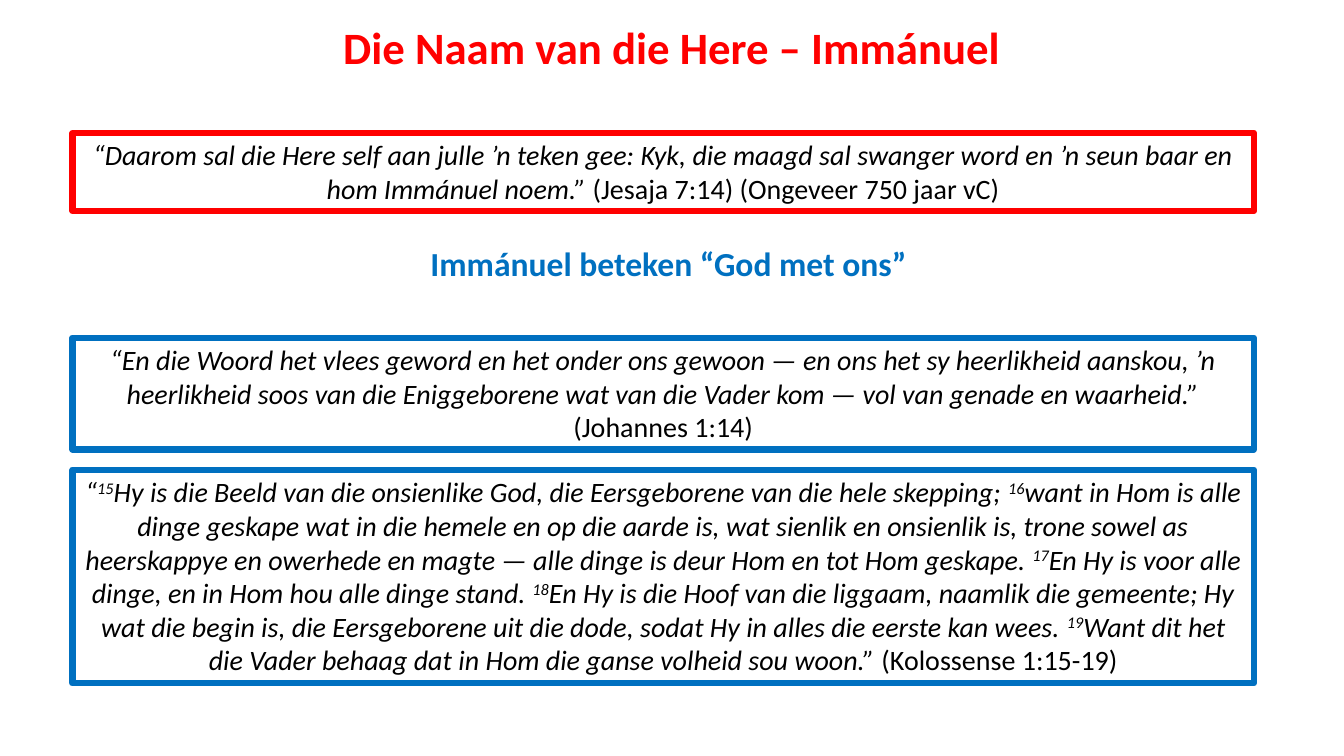
import pptx
import pptx.dml.color
import pptx.enum.shapes
import pptx.enum.text
import pptx.util

Cm = pptx.util.Cm
RED, BLUE, BLACK = "FF0000", "0070C0", "000000"
BOX_LEFT, BOX_WIDTH = 1.83, 29.77
SLIDE_WIDTH, SLIDE_HEIGHT = 33.87, 19.05

ISAIAH = [
    ("“Daarom sal die Here self aan julle ’n teken gee: Kyk, die maagd sal swanger word "
     "en ’n seun baar en hom Immánuel noem.” ", "quote"),
    ("(Jesaja 7:14) (Ongeveer 750 jaar vC)", "reference"),
]
JOHN = [
    ("“En die Woord het vlees geword en het onder ons gewoon — en ons het sy heerlikheid "
     "aanskou, ’n heerlikheid soos van die Eniggeborene wat van die Vader kom — vol van "
     "genade en waarheid.” ", "quote"),
    ("(Johannes 1:14)", "reference"),
]
COLOSSIANS = [
    ("“", "quote"),
    ("15", "verse"),
    ("Hy is die Beeld van die onsienlike God, die Eersgeborene van die hele skepping; ", "quote"),
    ("16", "verse"),
    ("want in Hom is alle dinge geskape wat in die hemele en op die aarde is, wat sienlik en "
     "onsienlik is, trone sowel as heerskappye en owerhede en magte — alle dinge is deur Hom "
     "en tot Hom geskape. ", "quote"),
    ("17", "verse"),
    ("En Hy is voor alle dinge, en in Hom hou alle dinge stand. ", "quote"),
    ("18", "verse"),
    ("En Hy is die Hoof van die liggaam, naamlik die gemeente; Hy wat die begin is, die "
     "Eersgeborene uit die dode, sodat Hy in alles die eerste kan wees. ", "quote"),
    ("19", "verse"),
    ("Want dit het die Vader behaag dat in Hom die ganse volheid sou woon.”", "quote"),
    (" (Kolossense 1:15-19)", "reference"),
]


def color(value):
    """Turn a hex string into a colour."""
    return pptx.dml.color.RGBColor.from_string(value)


def apply(target, values):
    """Set each named value on the target."""
    for name, value in values.items():
        setattr(target, name, value)


class ScriptureSlide:
    """Hold the style and the current slide."""

    font = "Calibri"
    formats = {
        "title": {"size": pptx.util.Pt(32), "bold": True},
        "meaning": {"size": pptx.util.Pt(24), "bold": True},
        "quote": {"size": pptx.util.Pt(20), "italic": True},
        "verse": {"size": pptx.util.Pt(20), "italic": True},
        "reference": {"size": pptx.util.Pt(20), "italic": False},
    }

    def __init__(self, presentation):
        """Add a title-only slide."""
        self.slide = presentation.slides.add_slide(presentation.slide_layouts[5])

    def fill_text(self, shape, runs, text_color, anchor=pptx.enum.text.MSO_ANCHOR.TOP):
        """Put formatted runs into one centred paragraph."""
        apply(shape.text_frame, {"word_wrap": True, "vertical_anchor": anchor})
        paragraph = shape.text_frame.paragraphs[0]
        paragraph.alignment = pptx.enum.text.PP_ALIGN.CENTER
        for text, style in runs:
            run = paragraph.add_run()
            run.text = text
            apply(run.font, {"name": self.font, **self.formats[style]})
            run.font.color.rgb = color(text_color)
            if style == "verse":
                run._r.get_or_add_rPr().set("baseline", "30000")
        return paragraph

    def title(self, text):
        """Place and fill the title."""
        shape = self.slide.shapes.title
        apply(shape, {"left": Cm(0), "top": Cm(0.5), "width": Cm(SLIDE_WIDTH), "height": Cm(1.53)})
        paragraph = self.fill_text(shape, [(text, "title")], RED, pptx.enum.text.MSO_ANCHOR.MIDDLE)
        paragraph.line_spacing = 0.9

    def meaning(self, text, left, top, height):
        """Add the line that explains the name."""
        shape = self.slide.shapes.add_textbox(Cm(left), Cm(top), Cm(BOX_WIDTH), Cm(height))
        self.fill_text(shape, [(text, "meaning")], BLUE)

    def scripture(self, runs, top, height, line_color):
        """Add an outlined box with a Bible passage."""
        shape = self.slide.shapes.add_shape(
            pptx.enum.shapes.MSO_SHAPE.RECTANGLE,
            Cm(BOX_LEFT), Cm(top), Cm(BOX_WIDTH), Cm(height))
        shape.shadow.inherit = False
        shape.fill.background()
        shape.line.color.rgb = color(line_color)
        shape.line.width = pptx.util.Pt(4.5)
        self.fill_text(shape, runs, BLACK)


def main():
    """Build and save the slide."""
    presentation = pptx.Presentation()
    apply(presentation, {"slide_width": Cm(SLIDE_WIDTH), "slide_height": Cm(SLIDE_HEIGHT)})
    page = ScriptureSlide(presentation)
    page.title("Die Naam van die Here – Immánuel")
    page.scripture(ISAIAH, 3.35, 1.97, RED)
    page.meaning("Immánuel beteken “God met ons” ", 2.06, 6, 1.28)
    page.scripture(JOHN, 8.51, 2.82, BLUE)
    page.scripture(COLOSSIANS, 11.84, 5.38, BLUE)
    presentation.save("out.pptx")


if __name__ == "__main__":
    main()
